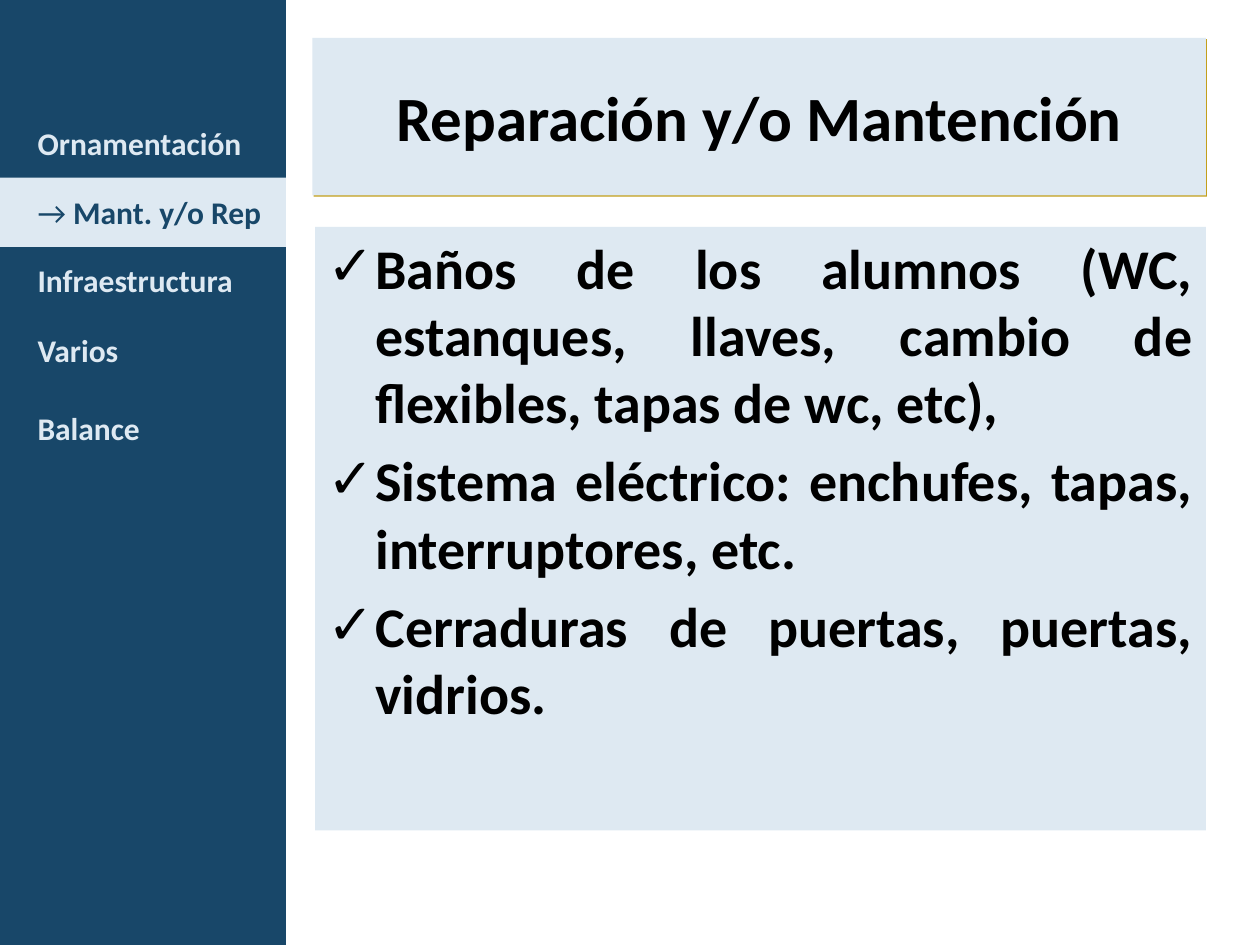
import dataclasses

import lxml.etree
import pptx
import pptx.dml.color
import pptx.enum.shapes
import pptx.enum.text
import pptx.oxml.ns
import pptx.util

Inches = pptx.util.Inches


@dataclasses.dataclass(frozen=True)
class Theme:
    font: str = "Calibri"
    navy: str = "184769"
    pale: str = "DEE9F2"
    black: str = "000000"
    gold: str = "C39F1B"
    title_size: int = 36
    body_size: int = 32
    menu_size: int = 18


theme = Theme()


def paint(shape, color):
    shape.fill.solid()
    shape.fill.fore_color.rgb = pptx.dml.color.RGBColor.from_string(color)
    shape.line.fill.background()
    shape.shadow.inherit = False


def style(para, size, color):
    for span in para.runs:
        span.font.name = theme.font
        span.font.size = pptx.util.Pt(size)
        span.font.bold = True
        span.font.color.rgb = pptx.dml.color.RGBColor.from_string(color)


deck = pptx.Presentation()
deck.slide_width = Inches(10)
deck.slide_height = Inches(7.5)
page = deck.slides.add_slide(deck.slide_layouts[1])
qn = pptx.oxml.ns.qn
rectangle = pptx.enum.shapes.MSO_SHAPE.RECTANGLE
align = pptx.enum.text.PP_ALIGN
anchor = pptx.enum.text.MSO_ANCHOR

title = page.shapes.title
title.left, title.top, title.width, title.height = Inches(2.48), Inches(0.3), Inches(7.09), Inches(1.25)
paint(title, theme.pale)
effects = title.element.spPr.find(qn("a:effectLst"))
shadow = lxml.etree.SubElement(effects, qn("a:outerShdw"), dist="12700", dir="3000000", algn="ctr", rotWithShape="0")
lxml.etree.SubElement(shadow, qn("a:srgbClr"), val=theme.gold)
title.text_frame.text = "Reparación y/o Mantención"
title.text_frame.auto_size = pptx.enum.text.MSO_AUTO_SIZE.NONE
title.text_frame.vertical_anchor = anchor.MIDDLE
title.text_frame.paragraphs[0].alignment = align.CENTER
style(title.text_frame.paragraphs[0], theme.title_size, theme.black)

body = page.placeholders[1]
body.left, body.top, body.width, body.height = Inches(2.5), Inches(1.8), Inches(7.07), Inches(4.79)
paint(body, theme.pale)
repairs = [
    "Baños de los alumnos (WC, estanques, llaves, cambio de flexibles, tapas de wc, etc),",
    "Sistema eléctrico: enchufes, tapas, interruptores, etc.",
    "Cerraduras de puertas, puertas, vidrios.",
]
body.text_frame.text = "\n".join(repairs)
body.text_frame.auto_size = pptx.enum.text.MSO_AUTO_SIZE.NONE
for para in body.text_frame.paragraphs:
    para.alignment = align.JUSTIFY
    style(para, theme.body_size, theme.black)
    properties = para._p.get_or_add_pPr()
    properties.set("marL", str(Inches(0.38)))
    properties.set("indent", str(-Inches(0.38)))
    lxml.etree.SubElement(properties, qn("a:buFont"), typeface=theme.font)
    lxml.etree.SubElement(properties, qn("a:buChar"), char="✓")

sidebar = page.shapes.add_shape(rectangle, 0, 0, Inches(2.27), Inches(7.5))
paint(sidebar, theme.navy)

menu = [
    ("Ornamentación", 0.86),
    ("Mant. y/o Rep", 1.41),
    ("Infraestructura", 1.95),
    ("Varios", 2.5),
    ("Balance", 3.12),
]
current = "Mant. y/o Rep"
for label, top in menu:
    place = (0, Inches(top), Inches(2.27), Inches(0.55))
    if label == current:
        box = page.shapes.add_shape(rectangle, *place)
        paint(box, theme.pale)
    else:
        box = page.shapes.add_textbox(*place)
    box.text_frame.word_wrap = True
    box.text_frame.vertical_anchor = anchor.MIDDLE
    para = box.text_frame.paragraphs[0]
    para.alignment = align.LEFT
    para._p.get_or_add_pPr().set("marL", str(Inches(0.2)))
    if label == current:
        para.add_run().text = "→ "
    para.add_run().text = label
    style(para, theme.menu_size, theme.navy if label == current else theme.pale)
    if label == current:
        para.runs[0].font.bold = False

deck.save("out.pptx")
